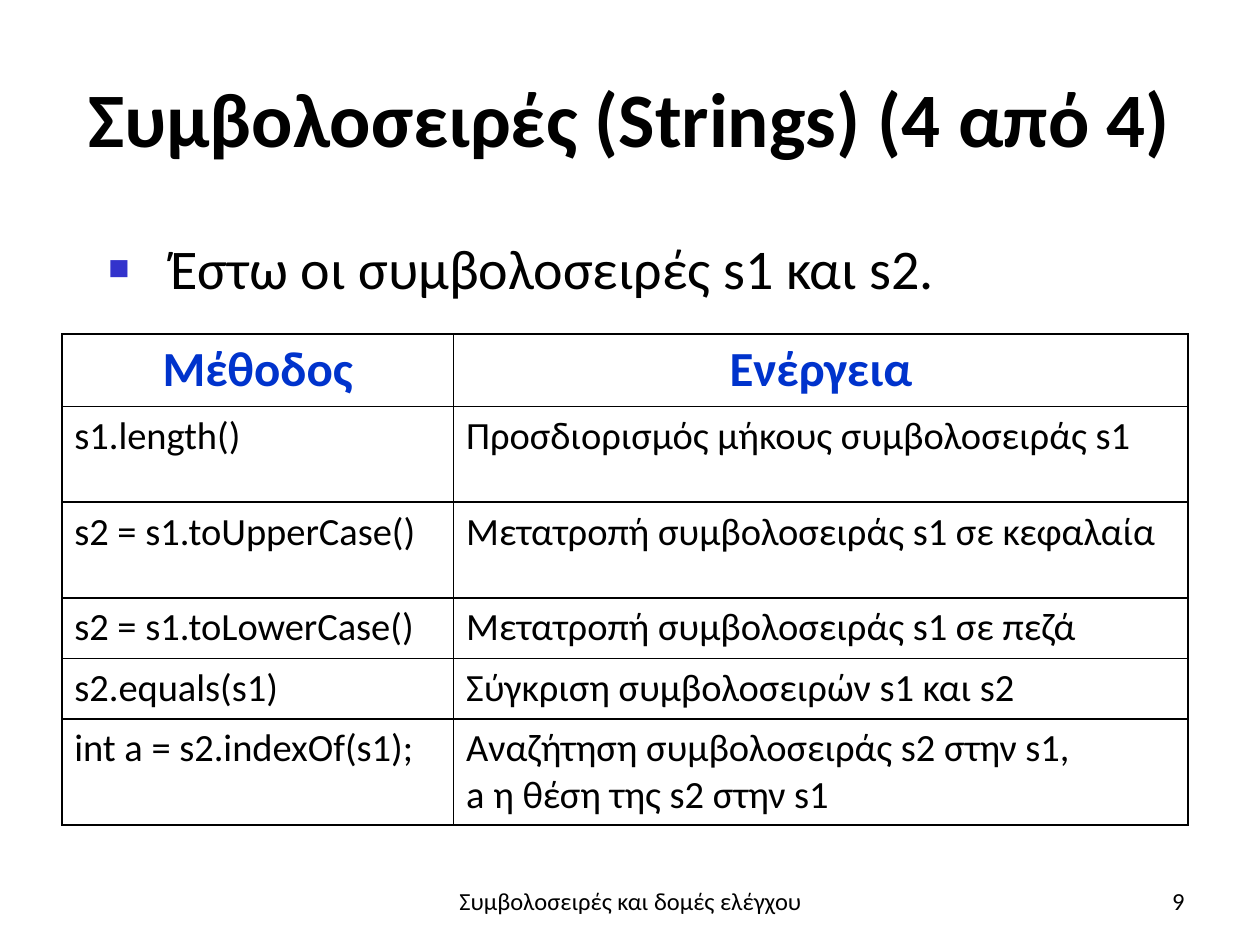
from lxml.etree import SubElement
from pptx import Presentation
from pptx.dml.color import RGBColor
from pptx.enum.text import MSO_ANCHOR as Anchor, MSO_AUTO_SIZE as AutoSize, PP_ALIGN as Align
from pptx.oxml.ns import qn
from pptx.util import Inches, Pt


def color(value):
    return RGBColor.from_string(value)


def write(frame, text, size=22, bold=False, ink="000000", align=Align.LEFT,
          anchor=Anchor.TOP, hanging=0):
    frame.word_wrap = True
    frame.vertical_anchor = anchor
    frame.text = text
    for para in frame.paragraphs:
        para.alignment = align
        para.space_before = Pt(0)
        properties = para._p.get_or_add_pPr()
        properties.set("marL", str(Inches(hanging)))
        properties.set("indent", str(-Inches(hanging)))
        for span in para.runs:
            span.font.name = "Calibri"
            span.font.size = Pt(size)
            span.font.bold = bold
            span.font.color.rgb = color(ink)


deck = Presentation()
deck.slide_width, deck.slide_height = Inches(10), Inches(7.5)
page = deck.slides.add_slide(deck.slide_layouts[1])

title, body = page.placeholders
title.left, title.top, title.width, title.height = map(Inches, (0.5, 0.3, 9, 1.25))
write(title.text_frame, "Συμβολοσειρές (Strings) (4 από 4)", size=44, bold=True,
      align=Align.CENTER, anchor=Anchor.MIDDLE)

body.left, body.top, body.width, body.height = map(Inches, (0.75, 1.86, 8.43, 0.59))
write(body.text_frame, "Έστω οι συμβολοσειρές s1 και s2.", size=32, hanging=0.5)
body.text_frame.auto_size = AutoSize.NONE
para = body.text_frame.paragraphs[0]
para.line_spacing = 0.9
properties = para._p.get_or_add_pPr()
bullet_color = SubElement(properties, qn("a:buClr"))
SubElement(bullet_color, qn("a:srgbClr"), val="3333CC")
SubElement(properties, qn("a:buSzPct"), val="120000")
SubElement(properties, qn("a:buFont"), typeface="Calibri")
SubElement(properties, qn("a:buChar"), char="▪")

rows = [
    (0.46, "Μέθοδος", "Ενέργεια"),
    (0.76, "s1.length()", "Προσδιορισμός μήκους συμβολοσειράς s1"),
    (0.76, "s2 = s1.toUpperCase()", "Μετατροπή συμβολοσειράς s1 σε κεφαλαία"),
    (0.48, "s2 = s1.toLowerCase()", "Μετατροπή συμβολοσειράς s1 σε πεζά"),
    (0.48, "s2.equals(s1)", "Σύγκριση συμβολοσειρών s1 και s2"),
    (0.81, "int a = s2.indexOf(s1);",
     "Αναζήτηση συμβολοσειράς s2 στην s1,\na η θέση της s2 στην s1"),
]
table = page.shapes.add_table(len(rows), 2, Inches(0.49), Inches(2.65),
                              Inches(8.94), Inches(3.75)).table
table.first_row = table.horz_banding = False
for column, width in zip(table.columns, (3.11, 5.83)):
    column.width = Inches(width)

header = dict(size=28, bold=True, ink="0033CC", align=Align.CENTER)
for row_number, (height, *texts) in enumerate(rows):
    table.rows[row_number].height = Inches(height)
    for cell, text in zip(table.rows[row_number].cells, texts):
        write(cell.text_frame, text, hanging=0.38, **({} if row_number else header))
        cell_properties = cell._tc.get_or_add_tcPr()
        for side in ("lnL", "lnR", "lnT", "lnB"):
            border = SubElement(cell_properties, qn(f"a:{side}"), w=str(Pt(1)))
            fill = SubElement(border, qn("a:solidFill"))
            SubElement(fill, qn("a:srgbClr"), val="000000")
        cell.fill.background()

for left, width, text, align in (
    (3.42, 3.17, "Συμβολοσειρές και δομές ελέγχου", Align.CENTER),
    (7.17, 2.33, "9", Align.RIGHT),
):
    box = page.shapes.add_textbox(Inches(left), Inches(6.95), Inches(width), Inches(0.4))
    write(box.text_frame, text, size=14, align=align, anchor=Anchor.MIDDLE)

deck.save("out.pptx")
